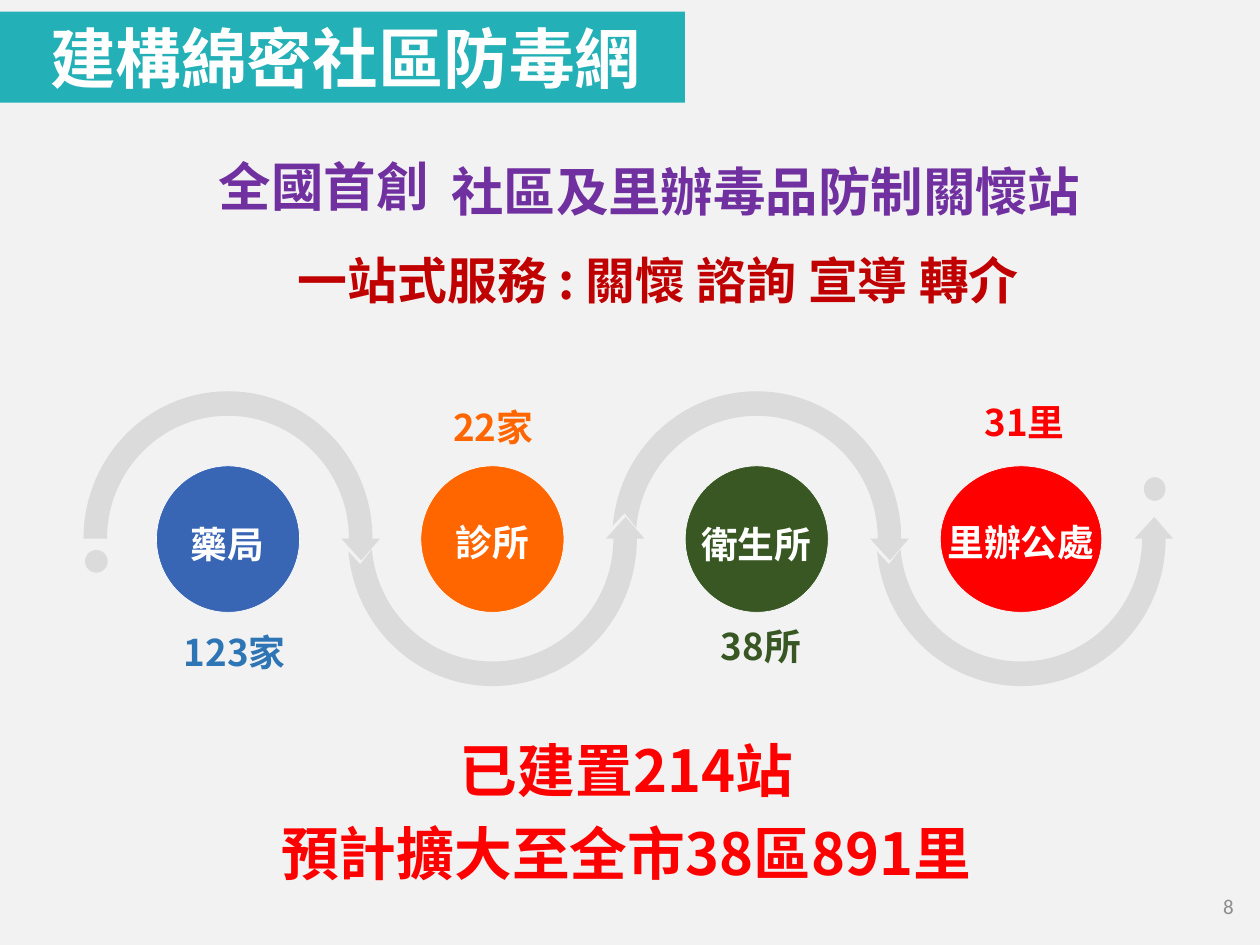
import math
from dataclasses import dataclass
from typing import Optional

import pptx
import pptx.dml.color
import pptx.enum.shapes
import pptx.enum.text
import pptx.oxml
import pptx.oxml.ns
import pptx.util

ALIGN = pptx.enum.text.PP_ALIGN
ANCHOR = pptx.enum.text.MSO_ANCHOR
FIT = pptx.enum.text.MSO_AUTO_SIZE
OVAL = pptx.enum.shapes.MSO_SHAPE.OVAL

SLIDE_WIDTH = pptx.util.Inches(13.34)
SLIDE_HEIGHT = pptx.util.Inches(10)

# All places and lengths are percentages of the slide's width and height.
FIRST_COLUMN = 18.1
COLUMN_STEP = 20.98
WAVE_ROW = 57.0
LABEL_HEIGHT = 5.2
OUTER_RADIUS = (11.47, 15.6)
INNER_RADIUS = (9.6, 13.0)
Point = tuple[float, float]


@dataclass(frozen=True)
class Theme:
    cjk: str = "Noto Sans CJK SC"
    latin: str = "Calibri"
    background: str = "F2F2F2"
    banner: str = "23B0B7"
    white: str = "FFFFFF"
    purple: str = "7030A0"
    crimson: str = "C00000"
    red: str = "FF0000"
    blue: str = "3965B5"
    light_blue: str = "2E75B6"
    orange: str = "FF6600"
    green: str = "385723"
    wave: str = "808080"
    wave_opacity: int = 20
    number: str = "8C8C8C"
    title_size: int = 50
    total_size: int = 44
    heading_size: int = 40
    service_size: int = 38
    station_size: int = 28
    number_size: int = 16


THEME = Theme()


@dataclass(frozen=True)
class Area:
    left: float
    top: float
    width: float
    height: float = LABEL_HEIGHT


@dataclass(frozen=True)
class Style:
    size: int
    color: str
    align: ALIGN = ALIGN.CENTER
    font: str = THEME.cjk
    bold: bool = True
    spacing: object = None


@dataclass(frozen=True)
class Label:
    text: str
    color: str
    area: Area


@dataclass(frozen=True)
class Station:
    fill: str
    name: Label
    count: Label
    width: float = 11.36


STATIONS = [
    Station(THEME.blue, Label("藥局", THEME.white, Area(10.49, 54.3, 15.07)),
            Label("123家", THEME.light_blue, Area(4.95, 65.7, 27.36))),
    Station(THEME.orange, Label("診所", THEME.white, Area(34.11, 54.1, 9.9)),
            Label("22家", THEME.orange, Area(20.39, 41.9, 37.48))),
    Station(THEME.green, Label("衛生所", THEME.white, Area(52.77, 54.3, 14.47)),
            Label("38所", THEME.green, Area(39.21, 65.05, 42.35))),
    Station(THEME.red, Label("里辦公處", THEME.white, Area(74.81, 54.1, 12.44)),
            Label("31里", THEME.red, Area(62.82, 41.35, 36.96)), 12.82),
]
DOTS = [Area(6.75, 58.2, 1.8, 2.4), Area(90.78, 50.5, 1.72, 2.5)]


def across(share: float) -> int:
    return round(SLIDE_WIDTH * share / 100)


def down(share: float) -> int:
    return round(SLIDE_HEIGHT * share / 100)


def place(area: Area) -> tuple[int, int, int, int]:
    return across(area.left), down(area.top), across(area.width), down(area.height)


def rgb(color: str) -> pptx.dml.color.RGBColor:
    return pptx.dml.color.RGBColor.from_string(color)


def element(tag: str, attributes: str, inner: str = ""):
    return pptx.oxml.parse_xml(
        f'<a:{tag} {pptx.oxml.ns.nsdecls("a")} {attributes}>{inner}</a:{tag}>')


def paint(shape, color: str, outline: Optional[str] = None, opacity: int = 100) -> None:
    shape.shadow.inherit = False
    shape.fill.solid()
    shape.fill.fore_color.rgb = rgb(color)
    if opacity < 100:
        tone = shape.fill._xPr.find(".//" + pptx.oxml.ns.qn("a:srgbClr"))
        tone.append(element("alpha", f'val="{opacity * 1000}"'))
    if outline:
        shape.line.color.rgb = rgb(outline)
        shape.line.width = pptx.util.Pt(0.5)
    else:
        shape.line.fill.background()


def set_formats(target, **formats) -> None:
    for name, value in formats.items():
        setattr(target, name, value)


def write(frame, lines: list[str], style: Style) -> None:
    for index, line in enumerate(lines):
        para = frame.add_paragraph() if index else frame.paragraphs[0]
        set_formats(para, alignment=style.align, line_spacing=style.spacing,
                    space_before=pptx.util.Pt(4 if index else 0))
        span = para.add_run()
        span.text = line
        set_formats(span.font, size=pptx.util.Pt(style.size), bold=style.bold, name=style.font)
        span.font.color.rgb = rgb(style.color)
        span._r.get_or_add_rPr().append(element("ea", f'typeface="{style.font}"'))


def add_text(page, area: Area, lines: list[str], style: Style,
             margin: Optional[float] = None, **formats) -> None:
    frame = page.shapes.add_textbox(*place(area)).text_frame
    set_formats(frame, **{"word_wrap": True, "auto_size": FIT.SHAPE_TO_FIT_TEXT, **formats})
    if margin is not None:
        for side in ("left", "top", "right", "bottom"):
            setattr(frame, f"margin_{side}", pptx.util.Inches(margin))
    write(frame, lines, style)


def add_label(page, label: Label) -> None:
    add_text(page, label.area, [label.text],
             Style(THEME.station_size, label.color, spacing=1.2), margin=0)


def add_oval(page, area: Area, color: str, outline: Optional[str] = None,
             opacity: int = 100) -> None:
    paint(page.shapes.add_shape(OVAL, *place(area)), color, outline, opacity)


def column_center(column: int) -> float:
    return FIRST_COLUMN + COLUMN_STEP * column


def arc(radius: Point, start: float, end: float) -> list[Point]:
    """Two control points and the end point of a Bezier arc, angles in degrees."""
    start, end = math.radians(start), math.radians(end)
    pull = 4 / 3 * math.tan((end - start) / 4)

    def shifted(angle: float, amount: float) -> Point:
        return (radius[0] * (amount * math.sin(angle) - math.cos(angle)),
                radius[1] * (amount * math.cos(angle) + math.sin(angle)))

    return [shifted(start, pull), shifted(end, -pull), shifted(end, 0)]


def add_wave(page, column: int) -> None:
    """Draw a half-ring arrow; odd columns hang down, later ones have a notched tail."""
    side = 1 if column % 2 else -1
    tail = 5 if column else 0
    steps = [arc(OUTER_RADIUS, tail, tail)[-1:],
             arc(OUTER_RADIUS, tail, 90), arc(OUTER_RADIUS, 90, 180),
             [(12.07, 0)], [(10.57, -2.3)], [(9.0, 0)],
             arc(INNER_RADIUS, 180, 180)[-1:],
             arc(INNER_RADIUS, 180, 90), arc(INNER_RADIUS, 90, tail)]
    if column:
        steps.append([(-10.49, 2.7)])
    steps = [[(across(column_center(column) + x), down(WAVE_ROW + side * y)) for x, y in step]
             for step in steps]

    builder = page.shapes.build_freeform(*steps[0][0])
    builder.add_line_segments([step[-1] for step in steps[1:]], close=True)
    wave = builder.convert_to_shape()
    lines = list(wave._element.iter(pptx.oxml.ns.qn("a:lnTo")))
    for line, step in zip(lines, steps[1:]):
        if len(step) == 3:
            points = "".join(f'<a:pt x="{x - wave.left}" y="{y - wave.top}"/>' for x, y in step)
            line.getparent().replace(line, element("cubicBezTo", "", points))
    paint(wave, THEME.wave, opacity=THEME.wave_opacity)


def add_banner(page) -> None:
    title = page.shapes.title
    title.left, title.top, title.width, title.height = place(Area(-10.79, 1.24, 65.14, 9.62))
    paint(title, THEME.banner)
    set_formats(title.text_frame, word_wrap=True, auto_size=FIT.NONE,
                vertical_anchor=ANCHOR.MIDDLE, margin_left=pptx.util.Inches(1.97))
    write(title.text_frame, ["建構綿密社區防毒網"],
          Style(THEME.title_size, THEME.white, ALIGN.LEFT))


def add_stations(page) -> None:
    for station in STATIONS:
        add_label(page, station.count)
    for column, station in enumerate(STATIONS):
        left = column_center(column) - station.width / 2
        add_oval(page, Area(left, 49.3, station.width, 15.5), station.fill, THEME.white)
    for dot in DOTS:
        add_oval(page, dot, THEME.wave, opacity=THEME.wave_opacity)
    for column, station in enumerate(STATIONS):
        add_wave(page, column)
        add_label(page, station.name)


def main() -> None:
    deck = pptx.Presentation()
    deck.slide_width, deck.slide_height = SLIDE_WIDTH, SLIDE_HEIGHT
    page = deck.slides.add_slide(deck.slide_layouts[5])
    page.background.fill.solid()
    page.background.fill.fore_color.rgb = rgb(THEME.background)

    add_banner(page)
    add_text(page, Area(0, 76.4, 99.44, 18.6), ["已建置214站", "預計擴大至全市38區891里"],
             Style(THEME.total_size, THEME.red, spacing=pptx.util.Pt(59)),
             margin=0.05, auto_size=FIT.NONE)
    add_stations(page)
    add_text(page, Area(35.08, 14.3, 51.95, 8.9), ["社區及里辦毒品防制關懷站"],
             Style(THEME.heading_size, THEME.purple, ALIGN.LEFT, spacing=1.3), word_wrap=False)
    add_text(page, Area(17.17, 25.9, 70.16, 7.4), ["一站式服務 : 關懷 諮詢 宣導 轉介"],
             Style(THEME.service_size, THEME.crimson))
    add_text(page, Area(16.64, 15.8, 18.37, 7.7), ["全國首創"],
             Style(THEME.heading_size, THEME.purple, ALIGN.LEFT), word_wrap=False)
    add_text(page, Area(76.16, 93.2, 22.49, 5.3), ["8"],
             Style(THEME.number_size, THEME.number, ALIGN.RIGHT, THEME.latin, bold=False),
             auto_size=FIT.NONE, vertical_anchor=ANCHOR.MIDDLE)
    deck.save("out.pptx")


if __name__ == "__main__":
    main()
